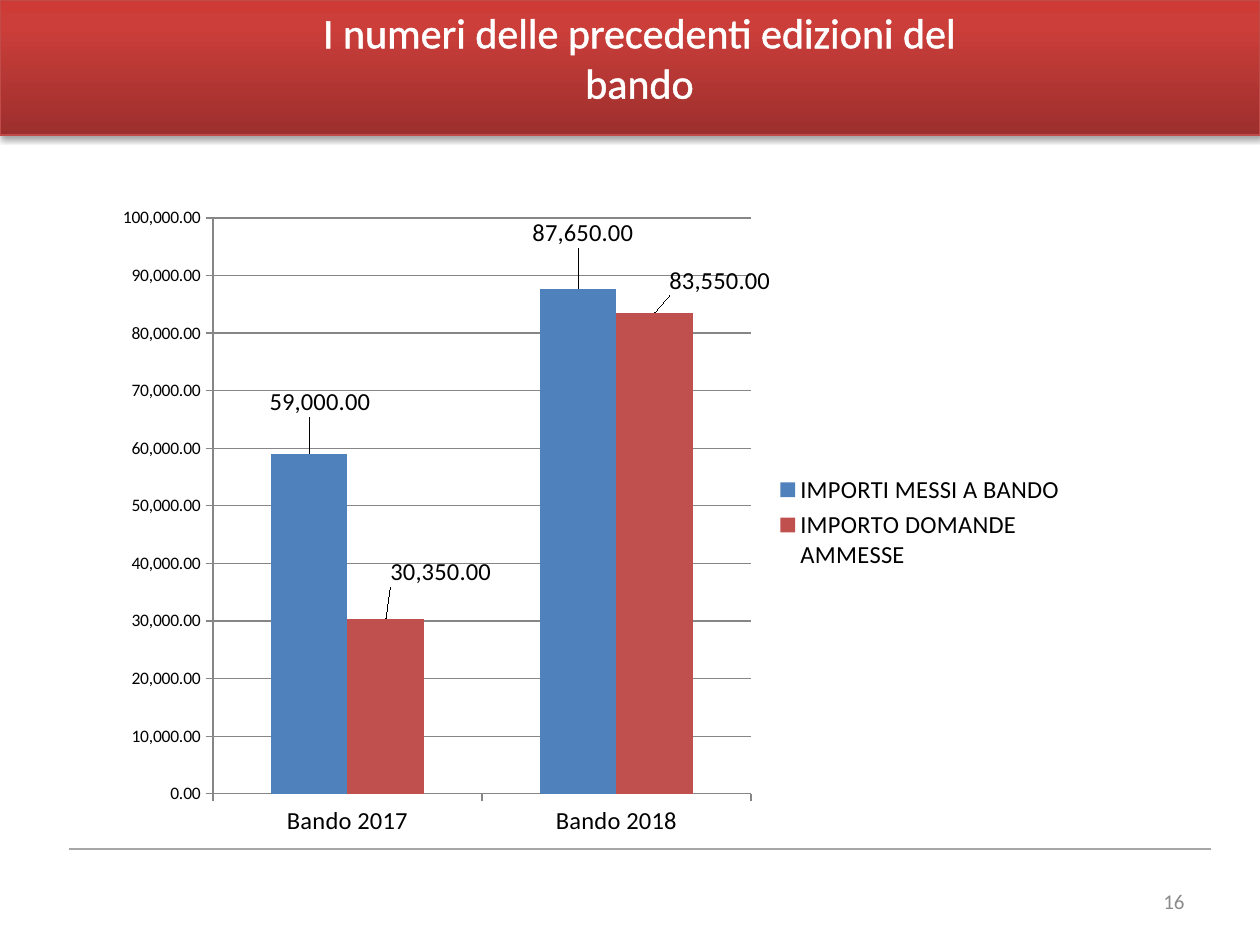
from copy import deepcopy

from lxml.etree import SubElement
from pptx import Presentation
from pptx.chart.data import CategoryChartData
from pptx.dml.color import RGBColor
from pptx.enum.chart import XL_CHART_TYPE, XL_LABEL_POSITION, XL_LEGEND_POSITION, XL_TICK_MARK
from pptx.enum.shapes import MSO_CONNECTOR, MSO_SHAPE
from pptx.enum.text import MSO_ANCHOR, PP_ALIGN
from pptx.oxml import parse_xml
from pptx.oxml.ns import nsdecls, qn
from pptx.util import Pt

EMU_PER_PX = 914400 / 126
FONT = "Calibri"
WHITE = RGBColor(0xFF, 0xFF, 0xFF)
BLACK = RGBColor(0, 0, 0)
BAND_STOPS = [(0, RGBColor(0x9C, 0x2F, 0x2D)), (0.8, RGBColor(0xCB, 0x3E, 0x3A)),
              (1, RGBColor(0xCE, 0x3B, 0x37))]
BAND_EDGE = RGBColor(0xBF, 0x4C, 0x48)
RULE_GREY = RGBColor(0xA6, 0xA6, 0xA6)
NUMBER_GREY = RGBColor(0x8C, 0x8C, 0x8C)
GRID_GREY = RGBColor(0x86, 0x86, 0x86)
BLUE = RGBColor(0x4F, 0x81, 0xBD)
RED = RGBColor(0xC0, 0x50, 0x4D)
CHART_BOX = (105, 195, 973, 655)


def px(*lengths):
    return [round(length * EMU_PER_PX) for length in lengths]


def manual_layout(x, y, w=None, h=None):
    """Chart layout from px: an inner plot box if w is given, else an offset."""
    fractions = {"x": x / CHART_BOX[2], "y": y / CHART_BOX[3]}
    modes = ""
    if w:
        fractions.update(w=w / CHART_BOX[2], h=h / CHART_BOX[3])
        modes = '<c:layoutTarget val="inner"/><c:xMode val="edge"/><c:yMode val="edge"/>'
    sizes = "".join(f'<c:{key} val="{value:.4f}"/>' for key, value in fractions.items())
    return parse_xml(f'<c:layout {nsdecls("c")}><c:manualLayout>{modes}{sizes}'
                     '</c:manualLayout></c:layout>')


prs = Presentation()
prs.slide_width, prs.slide_height = px(1260, 945)
slide = prs.slides.add_slide(prs.slide_layouts[5])
shapes = slide.shapes

# Header band
band = shapes.add_shape(MSO_SHAPE.RECTANGLE, *px(0, 0, 1260, 135))
band.fill.gradient()
band.fill.gradient_angle = 90
stop_list = band.element.spPr.find(qn("a:gradFill")).find(qn("a:gsLst"))
stop_list.insert(1, deepcopy(stop_list[0]))
for stop, (position, color) in zip(band.fill.gradient_stops, BAND_STOPS):
    stop.position = position
    stop.color.rgb = color
band.line.color.rgb = BAND_EDGE
band.line.width = Pt(0.75)
band.shadow.inherit = False
band.element.spPr.find(qn("a:effectLst")).append(parse_xml(
    f'<a:outerShdw {nsdecls("a")} blurRad="39370" dist="22860" dir="5400000" rotWithShape="0">'
    '<a:srgbClr val="000000"><a:alpha val="35000"/></a:srgbClr></a:outerShdw>'))

# Title, brought in front of the band
title = shapes.title
title.left, title.top, title.width, title.height = px(263, 0, 753, 115)
band.element.addnext(title.element)
title_frame = title.text_frame
title_frame.text = "I numeri delle precedenti edizioni del bando"
title_frame.word_wrap = True
title_frame.vertical_anchor = MSO_ANCHOR.TOP
title_line = title_frame.paragraphs[0]
title_line.alignment = PP_ALIGN.CENTER
title_font = title_line.runs[0].font
title_font.name = FONT
title_font.size = Pt(24)
title_font.color.rgb = WHITE
title_font.bold = False
title.element.xpath(".//a:rPr")[0].insert(0, parse_xml(
    f'<a:ln {nsdecls("a")} w="18415"><a:solidFill><a:srgbClr val="FFFFFF"/></a:solidFill></a:ln>'))

# Footer rule and page number
rule = shapes.add_connector(MSO_CONNECTOR.STRAIGHT, *px(69, 849, 1211, 849))
rule.line.color.rgb = RULE_GREY
rule.line.width = Pt(0.75)
SubElement(rule.element.spPr, qn("a:effectLst"))

number_frame = shapes.add_textbox(*px(903, 876, 294, 50)).text_frame
number_frame.text = "16"
number_frame.word_wrap = True
number_frame.vertical_anchor = MSO_ANCHOR.MIDDLE
page_number = number_frame.paragraphs[0]
page_number.alignment = PP_ALIGN.RIGHT
number_font = page_number.runs[0].font
number_font.name = FONT
number_font.size = Pt(12)
number_font.color.rgb = NUMBER_GREY

# Amounts by edition
amounts = CategoryChartData(number_format="#,##0.00")
amounts.categories = ["Bando 2017", "Bando 2018"]
amounts.add_series("IMPORTI MESSI A BANDO", [59000, 87650])
amounts.add_series("IMPORTO DOMANDE AMMESSE", [30350, 83550])
chart = shapes.add_chart(XL_CHART_TYPE.COLUMN_CLUSTERED, *px(*CHART_BOX), amounts).chart
chart.has_title = False
chart.font.name = FONT
chart.font.size = Pt(10)
chart.font.color.rgb = BLACK
chart.has_legend = True
chart.legend.position = XL_LEGEND_POSITION.RIGHT
chart.legend.include_in_layout = False
chart.legend.font.size = Pt(14)

editions, scale = chart.category_axis, chart.value_axis
editions.tick_labels.font.size = Pt(14)
scale.minimum_scale, scale.maximum_scale, scale.major_unit = 0, 100000, 10000
scale.tick_labels.number_format = "#,##0.00"
scale.tick_labels.number_format_is_linked = False
scale.has_major_gridlines = True
for lines in (editions.format.line, scale.format.line, scale.major_gridlines.format.line):
    lines.color.rgb = GRID_GREY
    lines.width = Pt(0.75)
for axis in (editions, scale):
    axis.major_tick_mark = XL_TICK_MARK.OUTSIDE

plot = chart.plots[0]
plot.vary_by_categories = False
plot.gap_width = 150
plot.overlap = 0
for series, color in zip(plot.series, (BLUE, RED)):
    series.format.fill.solid()
    series.format.fill.fore_color.rgb = color
    labels = series.data_labels
    labels.show_value = True
    labels.number_format = "#,##0.00"
    labels.number_format_is_linked = False
    labels.font.size = Pt(14)
    for index in range(len(amounts.categories)):
        label = series.points[index].data_label
        label.font.size = Pt(14)
        label.position = XL_LABEL_POSITION.OUTSIDE_END

label_offsets = [(11, -32), (5, -36), (55, -27), (65, -12)]
for label, offset in zip(chart.element.xpath(".//c:dLbl"), label_offsets):
    label.find(qn("c:idx")).addnext(manual_layout(*offset))

plot_area = chart.element.xpath(".//c:plotArea")[0]
for automatic in plot_area.findall(qn("c:layout")):
    plot_area.remove(automatic)
plot_area.insert(0, manual_layout(108, 23, 538, 576))

prs.save("out.pptx")
